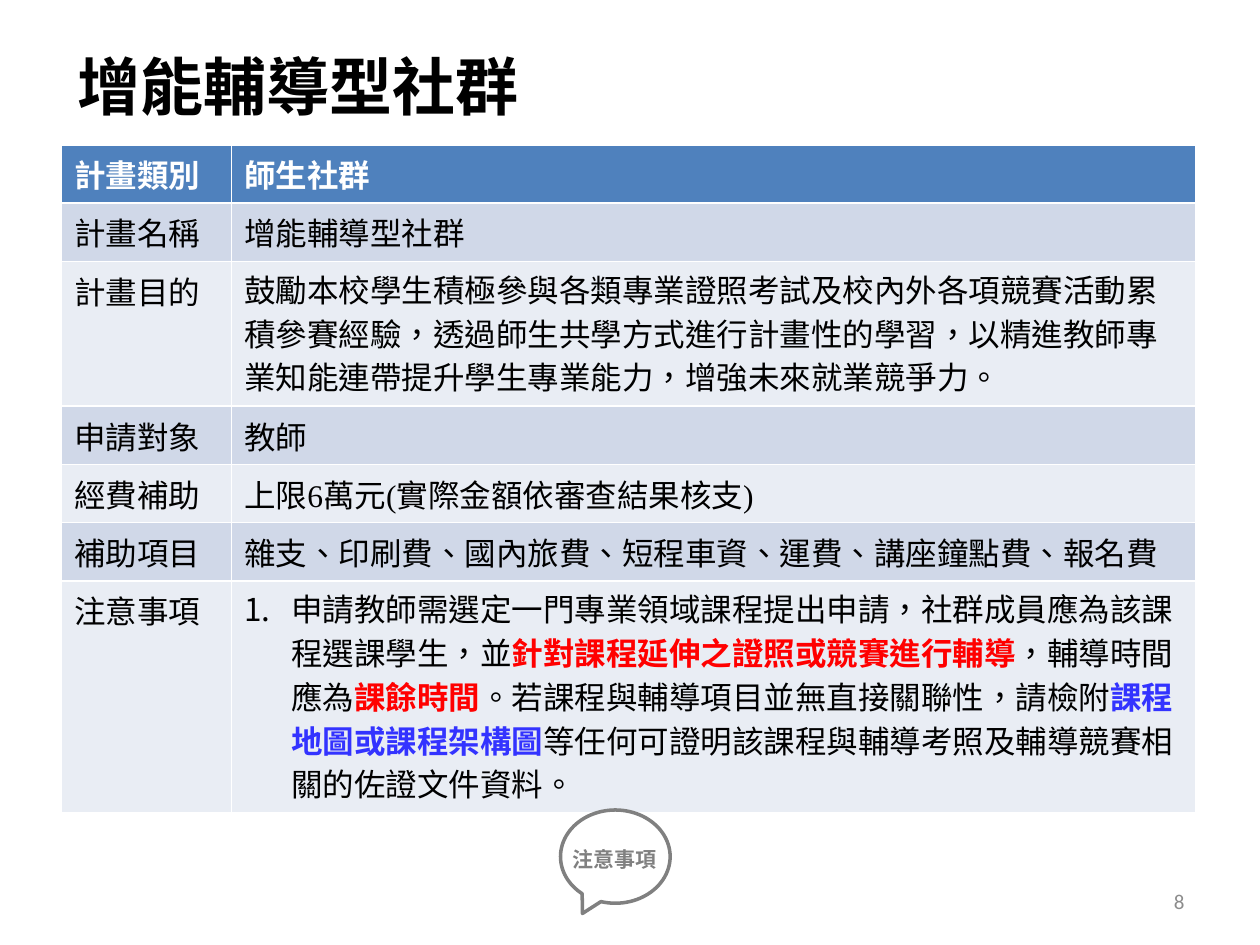
from dataclasses import dataclass
from typing import NamedTuple

import lxml.etree
import pptx
import pptx.dml.color
import pptx.enum.lang
import pptx.enum.shapes
import pptx.enum.text
import pptx.oxml.ns
import pptx.util

Cm, Pt = pptx.util.Cm, pptx.util.Pt
ANCHOR = pptx.enum.text.MSO_ANCHOR
ALIGN = pptx.enum.text.PP_ALIGN


@dataclass(frozen=True)
class Theme:
    header: str = "4F81BD"
    bands: tuple = ("E9EDF4", "D0D8E8")
    white: str = "FFFFFF"
    black: str = "000000"
    red: str = "FF0000"
    blue: str = "3333FF"
    grey: str = "808080"
    page_grey: str = "8C8C8C"
    cjk: str = "Noto Sans CJK SC"
    serif: str = "Times New Roman"
    sans: str = "Calibri"
    title_pt: int = 36
    body_pt: int = 18
    small_pt: int = 12
    leading_pt: int = 25


class Span(NamedTuple):
    text: str
    color: str = "000000"
    bold: bool = False


class Row(NamedTuple):
    label: str
    spans: list
    height: float = 1.04
    spaced: bool = False
    numbered: bool = False


T = Theme()

ROWS = [
    Row("計畫類別", [Span("師生社群", T.white, True)]),
    Row("計畫名稱", [Span("增能輔導型社群")]),
    Row("計畫目的", [Span(
        "鼓勵本校學生積極參與各類專業證照考試及校內外各項競賽活動累積參賽經驗，"
        "透過師生共學方式進行計畫性的學習，以精進教師專業知能連帶提升學生專業能力，"
        "增強未來就業競爭力。")], height=2.92, spaced=True),
    Row("申請對象", [Span("教師")]),
    Row("經費補助", [Span("上限6萬元(實際金額依審查結果核支)")]),
    Row("補助項目", [Span("雜支、印刷費、國內旅費、短程車資、運費、講座鐘點費、報名費")]),
    Row("注意事項", [
        Span("申請教師需選定一門專業領域課程提出申請，社群成員應為該課程選課學生，並"),
        Span("針對課程延伸之證照或競賽進行輔導", T.red, True),
        Span("，輔導時間應為"),
        Span("課餘時間", T.red, True),
        Span("。若課程與輔導項目並無直接關聯性，請檢附"),
        Span("課程地圖或課程架構圖", T.blue, True),
        Span("等任何可證明該課程與輔導考照及輔導競賽相關的佐證文件資料。"),
    ], height=4.5, spaced=True, numbered=True),
]


def rgb(value: str) -> pptx.dml.color.RGBColor:
    return pptx.dml.color.RGBColor.from_string(value)


def sub(parent, tag: str, **attrs: str) -> None:
    lxml.etree.SubElement(parent, pptx.oxml.ns.qn(tag), **attrs)


def add_run(p, span: Span, size: int, font: str) -> None:
    """Add a run with the given Latin font and the shared East Asian font."""
    r = p.add_run()
    r.text = span.text
    formats = {
        "size": Pt(size), "name": font, "bold": span.bold,
        "language_id": pptx.enum.lang.MSO_LANGUAGE_ID.TRADITIONAL_CHINESE,
    }
    for name, value in formats.items():
        setattr(r.font, name, value)
    r.font.color.rgb = rgb(span.color)
    sub(r.font._element, "a:ea", typeface=T.cjk)


def number_paragraph(p) -> None:
    pPr = p._p.get_or_add_pPr()
    indent = Cm(0.95)
    pPr.set("marL", str(indent))
    pPr.set("indent", str(-indent))
    sub(pPr, "a:buFont", typeface=T.cjk)
    sub(pPr, "a:buAutoNum", type="arabicPeriod")


def add_title(s, text: str) -> None:
    sp = s.shapes.title
    frame = {"left": Cm(1.3), "top": Cm(0.74), "width": Cm(16.03), "height": Cm(1.96)}
    for name, value in frame.items():
        setattr(sp, name, value)
    tf = sp.text_frame
    tf.vertical_anchor = ANCHOR.MIDDLE
    p = tf.paragraphs[0]
    p.alignment = ALIGN.LEFT
    add_run(p, Span(text, T.black, True), T.title_pt, T.cjk)


def add_plan_table(s, rows: list[Row]) -> None:
    widths = (3.43, 19.43)
    height = sum(row.height for row in rows)
    table = s.shapes.add_table(len(rows), len(widths), Cm(1.24), Cm(2.92),
                               Cm(sum(widths)), Cm(height)).table
    for column, width in zip(table.columns, widths):
        column.width = Cm(width)
    for i, row in enumerate(rows):
        table.rows[i].height = Cm(row.height)
        label = Span(row.label, T.black) if i else Span(row.label, T.white, True)
        for j, spans in enumerate(([label], row.spans)):
            cell = table.cell(i, j)
            cell.fill.solid()
            cell.fill.fore_color.rgb = rgb(T.bands[i % 2] if i else T.header)
            p = cell.text_frame.paragraphs[0]
            if j and row.spaced:
                p.line_spacing = Pt(T.leading_pt)
            if j and row.numbered:
                number_paragraph(p)
            for span in spans:
                add_run(p, span, T.body_pt, T.serif)


def add_label(shapes, box: tuple, span: Span, font: str, align, anchor,
              wrap: bool) -> None:
    tf = shapes.add_textbox(*map(Cm, box)).text_frame
    tf.word_wrap = wrap
    tf.vertical_anchor = anchor
    p = tf.paragraphs[0]
    p.alignment = align
    add_run(p, span, T.small_pt, font)


def add_callout(s, text: str) -> None:
    group = s.shapes.add_group_shape()
    add_label(group.shapes, (11.3, 16.94, 2.24, 0.76), Span(text, T.grey, True),
              T.cjk, ALIGN.LEFT, ANCHOR.TOP, False)
    sp = group.shapes.add_shape(
        pptx.enum.shapes.MSO_SHAPE.OVAL_CALLOUT,
        Cm(11.3), Cm(16.33), Cm(2.21), Cm(1.88))
    sp.adjustments[0], sp.adjustments[1] = -0.3, 0.61
    sp.shadow.inherit = False
    sp.fill.background()
    sp.line.color.rgb = rgb(T.grey)
    sp.line.width = Pt(2)


def main() -> None:
    prs = pptx.Presentation()
    prs.slide_width, prs.slide_height = Cm(25.4), Cm(19.05)
    s = prs.slides.add_slide(prs.slide_layouts[5])
    add_title(s, "增能輔導型社群")
    add_plan_table(s, ROWS)
    add_label(s.shapes, (18.21, 17.65, 5.92, 1.02), Span("8", T.page_grey),
              T.sans, ALIGN.RIGHT, ANCHOR.MIDDLE, True)
    add_callout(s, "注意事項")
    prs.save("out.pptx")


if __name__ == "__main__":
    main()
